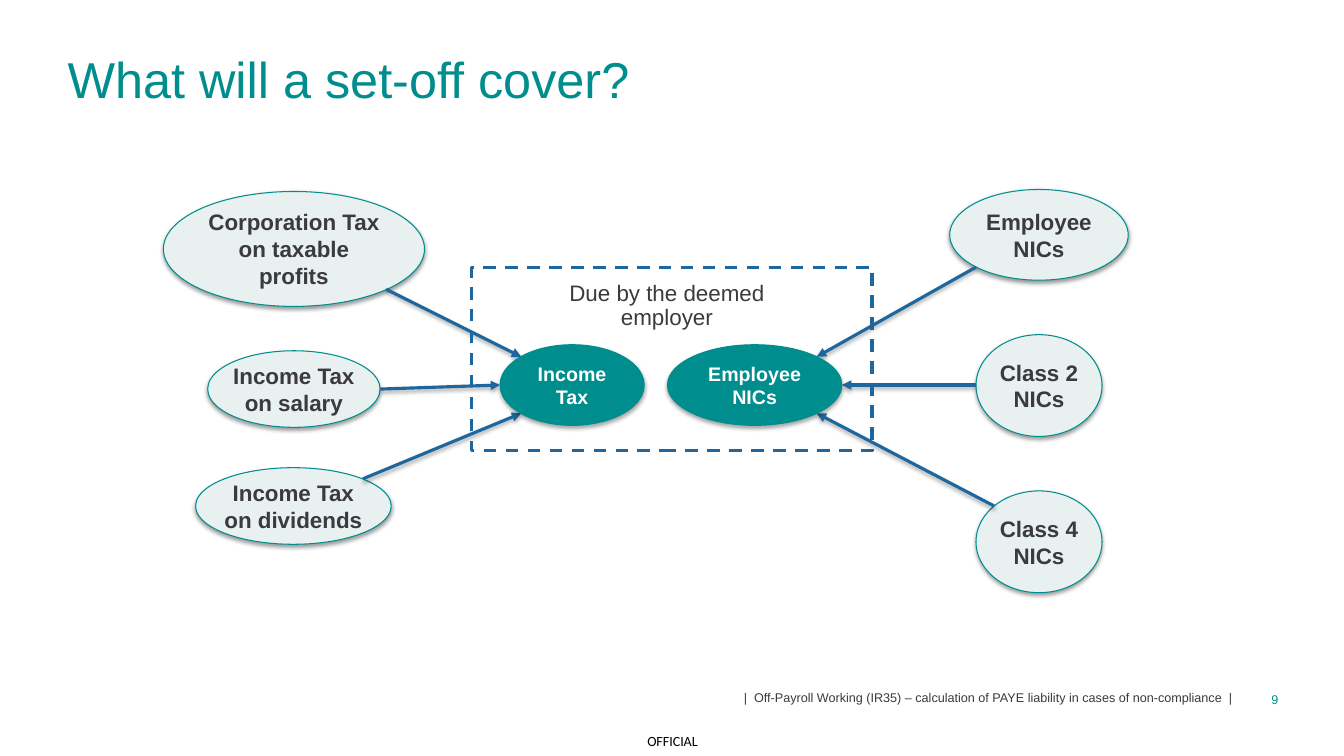
from dataclasses import dataclass
from math import sqrt

from lxml.etree import SubElement
from pptx import Presentation
from pptx.dml.color import RGBColor
from pptx.enum.dml import MSO_LINE
from pptx.enum.shapes import MSO_CONNECTOR, MSO_SHAPE
from pptx.enum.text import MSO_ANCHOR as Anchor, MSO_AUTO_SIZE as Fit, PP_ALIGN as Align
from pptx.oxml.ns import qn
from pptx.slide import Slide
from pptx.text.text import TextFrame
from pptx.util import Pt

PX = 9144  # 100 px to the inch
TEAL = RGBColor(0x00, 0x8D, 0x8E)
PALE = RGBColor(0xE8, 0xF0, 0xF0)
BLUE = RGBColor(0x1E, 0x67, 0x9E)
INK = RGBColor(0x3B, 0x3A, 0x3D)
WHITE = RGBColor(0xFF, 0xFF, 0xFF)
BLACK = RGBColor(0x00, 0x00, 0x00)

Box = tuple[int, int, int, int]
Direction = tuple[int, int]


@dataclass(frozen=True)
class Style:
    size: int
    color: RGBColor
    bold: bool = False
    font: str = "Arial"
    align: Align = Align.CENTER
    anchor: Anchor = Anchor.TOP
    inset: bool = True
    wrap: bool = True
    fit: Fit = Fit.SHAPE_TO_FIT_TEXT


@dataclass(frozen=True)
class Oval:
    box: Box
    text: str
    fill: RGBColor
    style: Style

    def site(self, direction: Direction) -> tuple[int, int]:
        """Point on the outline in a direction such as (-1, 0) or (1, 1)."""
        x, y, w, h = self.box
        dx, dy = direction
        reach = 1 / sqrt(dx * dx + dy * dy)
        return round(x + w / 2 * (1 + dx * reach)), round(y + h / 2 * (1 + dy * reach))


@dataclass(frozen=True)
class Arrow:
    target: Oval
    target_side: Direction
    source: Oval
    source_side: Direction


@dataclass(frozen=True)
class Label:
    box: Box
    text: str
    style: Style


LEFT = Style(16, INK, bold=True, inset=False, wrap=False)
LEFT_WRAPPED = Style(16, INK, bold=True, inset=False)
RIGHT = Style(16, INK, bold=True, anchor=Anchor.MIDDLE, wrap=False, fit=Fit.NONE)
DUE = Style(14, WHITE, bold=True)

CORPORATION_TAX = Oval((162, 190, 259, 114), "Corporation Tax\non taxable profits", PALE, LEFT_WRAPPED)
SALARY = Oval((206, 348, 171, 76), "Income Tax\non salary", PALE, LEFT)
DIVIDENDS = Oval((194, 464, 194, 76), "Income Tax\non dividends", PALE, LEFT)
EMPLOYEE = Oval((942, 188, 177, 90), "Employee\nNICs", PALE, RIGHT)
CLASS_2 = Oval((968, 332, 125, 101), "Class 2\nNICs", PALE, RIGHT)
CLASS_4 = Oval((968, 487, 125, 101), "Class 4\nNICs", PALE, RIGHT)
INCOME_TAX_DUE = Oval((496, 342, 143, 80), "Income Tax", TEAL, DUE)
NICS_DUE = Oval((662, 342, 173, 80), "Employee\nNICs", TEAL, DUE)

PAID = [DIVIDENDS, SALARY, CORPORATION_TAX, EMPLOYEE, CLASS_2, CLASS_4]
ARROWS = [
    Arrow(INCOME_TAX_DUE, (-1, 0), SALARY, (1, 0)),
    Arrow(INCOME_TAX_DUE, (-1, 1), DIVIDENDS, (1, -1)),
    Arrow(INCOME_TAX_DUE, (-1, -1), CORPORATION_TAX, (1, 1)),
    Arrow(NICS_DUE, (1, -1), EMPLOYEE, (-1, 1)),
    Arrow(NICS_DUE, (1, 0), CLASS_2, (-1, 0)),
    Arrow(NICS_DUE, (1, 1), CLASS_4, (-1, -1)),
]

TITLE = Label((67, 52, 1200, 91), "What will a set-off cover?",
              Style(36, TEAL, align=Align.LEFT, inset=False, fit=Fit.NONE))
MARKING = Label((627, 721, 80, 29), "OFFICIAL",
                Style(10, BLACK, font="Calibri", anchor=Anchor.MIDDLE, inset=False))
PAGE = Label((1234, 686, 34, 15), "9", Style(9, TEAL, align=Align.RIGHT, inset=False))
FOOTER = Label(
    (241, 681, 981, 22),
    "|  Off-Payroll Working (IR35) – calculation of PAYE liability in cases of non-compliance  |",
    Style(9, INK, align=Align.RIGHT, anchor=Anchor.MIDDLE, inset=False, fit=Fit.NONE))
DUE_LABEL = Label((548, 275, 227, 59), "Due by the deemed employer", Style(16, INK))
DUE_FRAME: Box = (468, 265, 397, 182)


def emu(*lengths: int) -> list[int]:
    return [length * PX for length in lengths]


def write(tf: TextFrame, text: str, style: Style) -> None:
    tf.text = text
    tf.word_wrap = style.wrap
    tf.auto_size = style.fit
    tf.vertical_anchor = style.anchor
    if not style.inset:
        tf.margin_left = tf.margin_top = tf.margin_right = tf.margin_bottom = 0
    for p in tf.paragraphs:
        p.alignment = style.align
        for r in p.runs:
            r.font.name, r.font.size = style.font, Pt(style.size)
            r.font.bold, r.font.color.rgb = style.bold, style.color


def add_shadow(sp_pr, opacity: int, distance: float) -> None:
    effects = SubElement(sp_pr, qn("a:effectLst"))
    shadow = SubElement(effects, qn("a:outerShdw"), blurRad=str(Pt(3.1)), dist=str(Pt(distance)),
                        dir="5400000", rotWithShape="0")
    color = SubElement(shadow, qn("a:srgbClr"), val="000000")
    SubElement(color, qn("a:alpha"), val=str(opacity * 1000))


def add_title(s: Slide, label: Label) -> None:
    title = s.shapes.title
    title.left, title.top, title.width, title.height = emu(*label.box)
    write(title.text_frame, label.text, label.style)
    p = title.text_frame.paragraphs[0]
    p.line_spacing, p.space_after = Pt(40), Pt(8)


def add_label(s: Slide, label: Label) -> TextFrame:
    tf = s.shapes.add_textbox(*emu(*label.box)).text_frame
    write(tf, label.text, label.style)
    return tf


def add_oval(s: Slide, oval: Oval) -> None:
    sp = s.shapes.add_shape(MSO_SHAPE.OVAL, *emu(*oval.box))
    sp.fill.solid()
    sp.fill.fore_color.rgb = oval.fill
    sp.line.color.rgb, sp.line.width = TEAL, Pt(0.75)
    if oval.fill == PALE:
        add_shadow(sp._element.spPr, 38, 1.6)
    else:
        add_shadow(sp._element.spPr, 35, 1.8)
    write(sp.text_frame, oval.text, oval.style)


def add_arrow(s: Slide, arrow: Arrow) -> None:
    """Draw a line whose arrowhead is at the target."""
    ends = arrow.target.site(arrow.target_side) + arrow.source.site(arrow.source_side)
    line = s.shapes.add_connector(MSO_CONNECTOR.STRAIGHT, *emu(*ends))
    line.line.color.rgb, line.line.width = BLUE, Pt(2.25)
    SubElement(line.line._get_or_add_ln(), qn("a:headEnd"), type="triangle")
    add_shadow(line._element.spPr, 35, 1.8)


def add_due_frame(s: Slide) -> None:
    sp = s.shapes.add_shape(MSO_SHAPE.RECTANGLE, *emu(*DUE_FRAME))
    sp.shadow.inherit = False
    sp.fill.background()
    sp.line.color.rgb, sp.line.width = BLUE, Pt(2.25)
    sp.line.dash_style = MSO_LINE.DASH


def main() -> None:
    prs = Presentation()
    prs.slide_width, prs.slide_height = emu(1333, 750)
    s = prs.slides.add_slide(prs.slide_layouts[5])
    add_title(s, TITLE)
    for label in (MARKING, PAGE, FOOTER):
        add_label(s, label)
    for oval in PAID:
        add_oval(s, oval)
    for arrow in ARROWS:
        add_arrow(s, arrow)
    for oval in (INCOME_TAX_DUE, NICS_DUE):
        add_oval(s, oval)
    add_label(s, DUE_LABEL).paragraphs[0].line_spacing = 0.9
    add_due_frame(s)
    prs.save("out.pptx")


if __name__ == "__main__":
    main()
